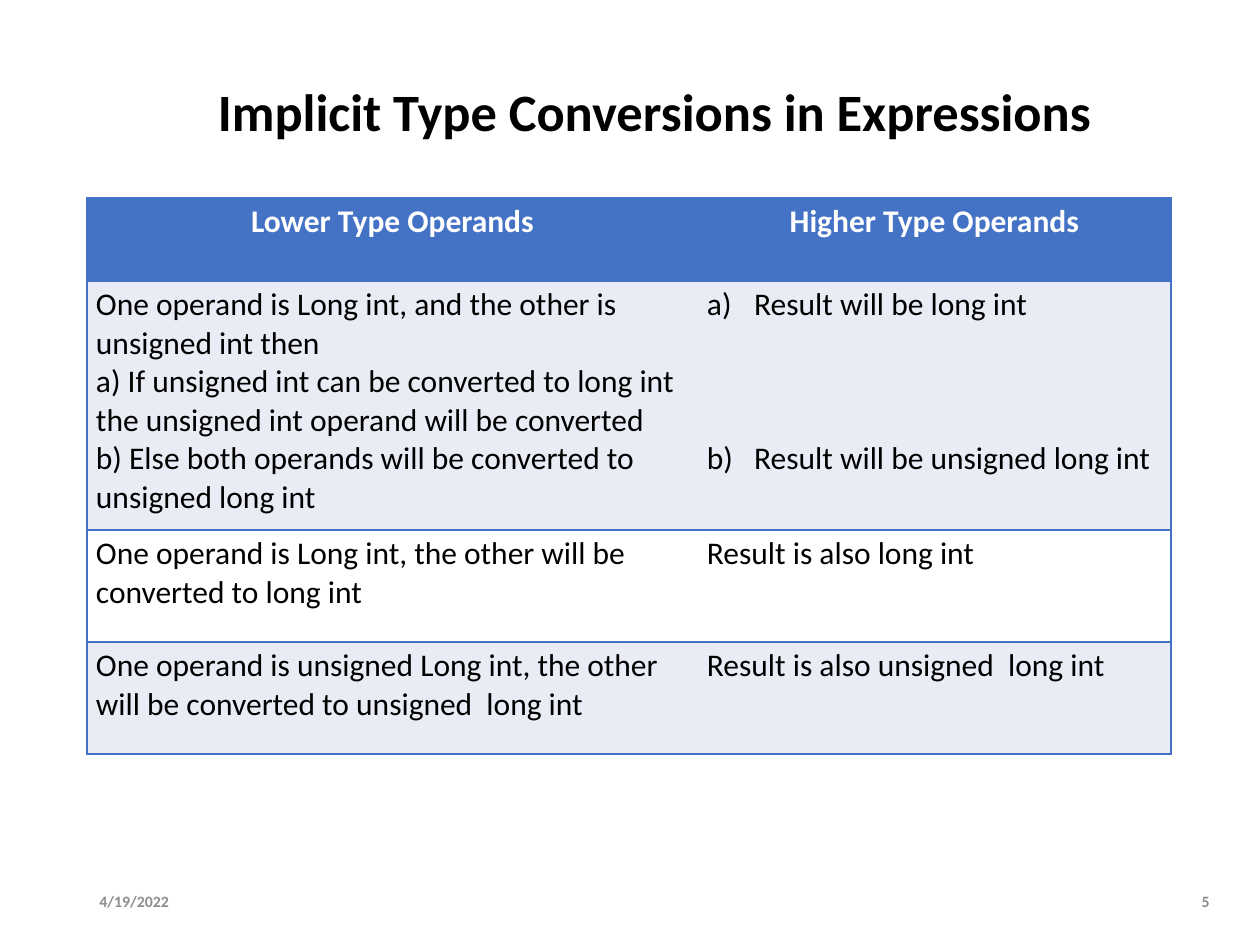
import pptx
import pptx.dml.color
import pptx.enum.text
import pptx.oxml
import pptx.oxml.ns
import pptx.util

ALIGN = pptx.enum.text.PP_ALIGN
ANCHOR = pptx.enum.text.MSO_ANCHOR
BLUE, BAND, WHITE, BLACK, GRAY = "4472C4", "E9EBF5", "FFFFFF", "000000", "8C8C8C"


def px(num):
    return pptx.util.Emu(round(num * 914400 / 126))


def color(code):
    return pptx.dml.color.RGBColor.from_string(code)


def node(tag, inner="", attrs=""):
    space = pptx.oxml.ns.nsdecls("a")
    return pptx.oxml.parse_xml(f"<a:{tag} {space} {attrs}>{inner}</a:{tag}>")


class Deck:
    font = "Calibri"

    def __init__(self, wide, high):
        self.file = pptx.Presentation()
        self.file.slide_width, self.file.slide_height = px(wide), px(high)
        self.slide = self.file.slides.add_slide(self.file.slide_layouts[6])

    def run(self, para, text, size, ink, bold):
        run = para.add_run()
        run.text = text
        font = run.font
        font.name, font.size, font.bold = self.font, pptx.util.Pt(size), bold
        font.color.rgb = color(ink)

    def text(self, box, text, size, ink, align=ALIGN.LEFT, lead=1.0):
        frame = self.slide.shapes.add_textbox(*map(px, box)).text_frame
        frame.word_wrap = True
        frame.vertical_anchor = ANCHOR.MIDDLE
        para = frame.paragraphs[0]
        para.alignment, para.line_spacing = align, lead
        self.run(para, text, size, ink, True)

    def border(self, cell, sides):
        """Draw the named sides in blue and clear the others."""
        props = cell._tc.get_or_add_tcPr()
        for spot, side in enumerate("LRTB"):
            fill = f'<a:solidFill><a:srgbClr val="{BLUE}"/></a:solidFill>'
            inner = fill if side in sides else "<a:noFill/>"
            props.insert(spot, node(f"ln{side}", inner, 'w="12700"'))

    def cell(self, cell, paras, fill, sides, head):
        cell.fill.solid()
        cell.fill.fore_color.rgb = color(fill)
        self.border(cell, sides)
        cell.margin_left = cell.margin_right = px(9)
        cell.margin_top = cell.margin_bottom = px(5)
        frame = cell.text_frame
        for spot, lines in enumerate(paras):
            para = frame.add_paragraph() if spot else frame.paragraphs[0]
            para.alignment = ALIGN.CENTER if head else ALIGN.LEFT
            for row, line in enumerate(lines.split("\n")):
                if row:
                    para.add_line_break()
                self.run(para, line, 18, WHITE if head else BLACK, head)

    def letter(self, para, start, gap=0):
        """Number a paragraph a), b), ... with a hanging indent."""
        para.space_before = pptx.util.Pt(gap)
        props = para._p.get_or_add_pPr()
        props.set("marL", "342900")
        props.set("indent", "-342900")
        props.append(node("buAutoNum", attrs=f'type="alphaLcParenR" startAt="{start}"'))

    def table(self, left, top, cols, rows, data):
        grid = self.slide.shapes.add_table(
            len(rows), len(cols), px(left), px(top), px(sum(cols)), px(sum(rows))).table
        for col, wide in zip(grid.columns, cols):
            col.width = px(wide)
        for row, high in zip(grid.rows, rows):
            row.height = px(high)
        for r, line in enumerate(data):
            fill = BLUE if r == 0 else BAND if r % 2 else WHITE
            for c, paras in enumerate(line):
                self.cell(grid.cell(r, c), paras, fill, ("LTB", "RTB")[c], r == 0)
        return grid


DATA = [
    (["Lower Type Operands"], ["Higher Type Operands"]),
    (["One operand is Long int, and the other is unsigned int then\n"
      "a) If unsigned int can be converted to long int "
      "the unsigned int operand will be converted",
      "b) Else both operands will be converted to unsigned long int"],
     ["Result will be long int", "Result will be unsigned long int"]),
    (["One operand is Long int, the other will be converted to long int"],
     ["Result is also long int"]),
    (["One operand is unsigned Long int, the other will be converted to unsigned  long int"],
     ["Result is also unsigned  long int"]),
]


def main():
    deck = Deck(1260, 945)

    # Title
    deck.text((87, 71, 1136, 87), "Implicit Type Conversions in Expressions",
              30, BLACK, ALIGN.CENTER, 0.9)

    # Conversion rules
    grid = deck.table(87, 198, (611, 473), (83, 249, 112, 112), DATA)
    first, second = grid.cell(1, 1).text_frame.paragraphs
    deck.letter(first, 1)
    deck.letter(second, 2, gap=66)  # level with rule b) on the left

    # Footer
    deck.text((87, 876, 120, 50), "4/19/2022", 9, GRAY)
    deck.text((1173, 876, 49, 50), "5", 9, GRAY, ALIGN.RIGHT)

    deck.file.save("out.pptx")


if __name__ == "__main__":
    main()
